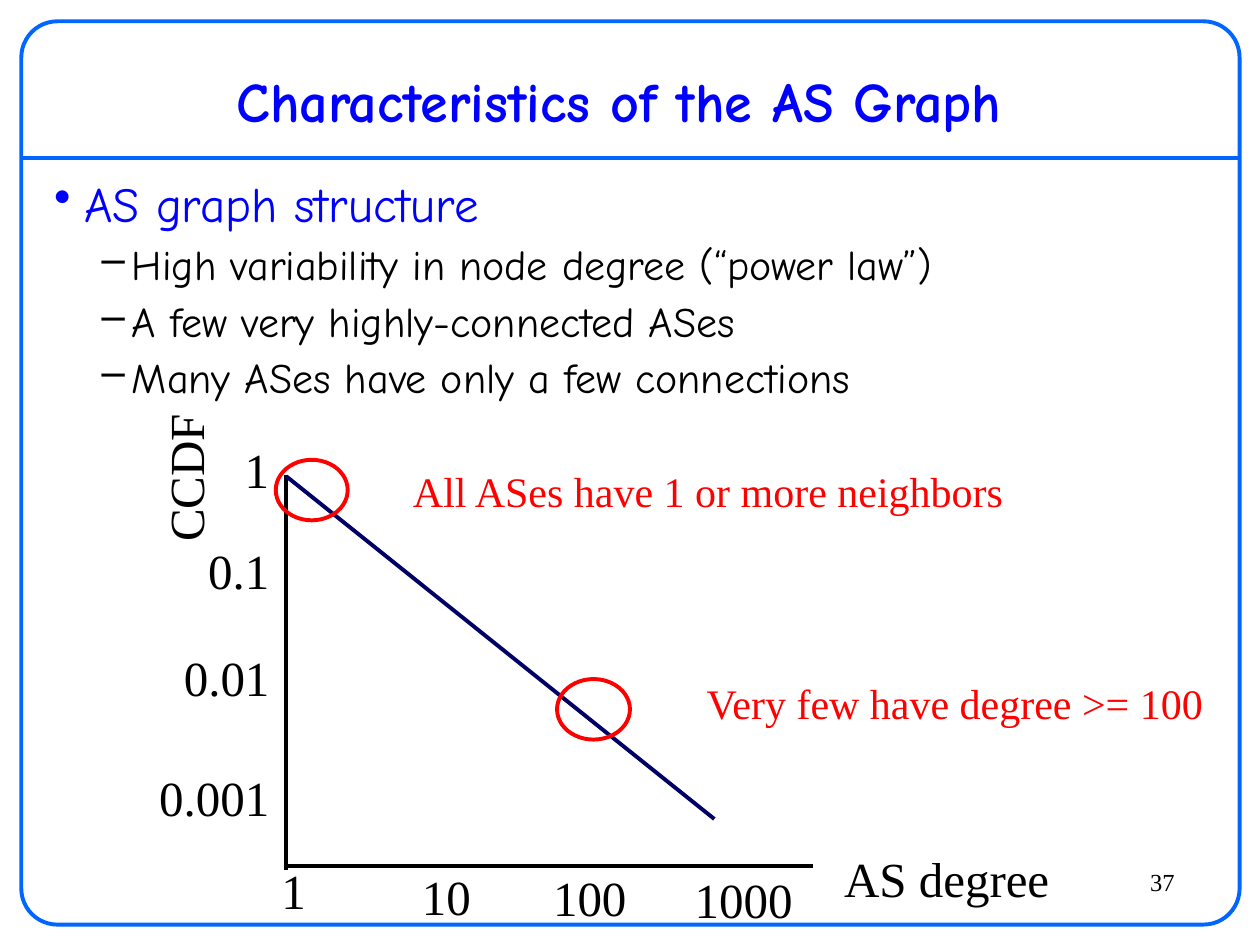
from dataclasses import dataclass

from lxml import etree
from pptx import Presentation
from pptx.dml.color import RGBColor
from pptx.enum.shapes import MSO_CONNECTOR, MSO_SHAPE
from pptx.enum.text import MSO_ANCHOR, PP_ALIGN
from pptx.oxml.ns import qn
from pptx.util import Cm, Pt

STRAIGHT = MSO_CONNECTOR.STRAIGHT
ROUNDED, OVAL = MSO_SHAPE.ROUNDED_RECTANGLE, MSO_SHAPE.OVAL
LEFT, CENTER, RIGHT = PP_ALIGN.LEFT, PP_ALIGN.CENTER, PP_ALIGN.RIGHT
TOP, MIDDLE = MSO_ANCHOR.TOP, MSO_ANCHOR.MIDDLE


@dataclass(frozen=True)
class Theme:
    heading_font: str = "Comic Neue"
    label_font: str = "Times New Roman"
    frame: str = "0066FF"
    heading: str = "0000FF"
    ink: str = "000000"
    trend: str = "000066"
    accent: str = "FF0000"
    title_size: int = 32
    large: int = 28
    medium: int = 24
    small: int = 14
    stroke: float = 2.25


class SlideBuilder:
    """Draws styled elements on one page; lengths are in centimetres."""

    def __init__(self, page, theme):
        self.page = page
        self.theme = theme

    def add_span(self, para, text, size, color, font, bold=False):
        span = para.add_run()
        span.text = text
        span.font.name = font
        span.font.size = Pt(size)
        span.font.bold = bold
        span.font.color.rgb = RGBColor.from_string(color)

    def title(self, text, left, top, width, height):
        box = self.page.shapes.title
        box.left, box.top, box.width, box.height = map(Cm, (left, top, width, height))
        box.text_frame.vertical_anchor = MIDDLE
        para = box.text_frame.paragraphs[0]
        para.alignment = CENTER
        self.add_span(para, text, self.theme.title_size, self.theme.heading,
                      self.theme.heading_font, bold=True)

    def label(self, text, left, top, width, height=1.45, size=None,
              color=None, align=CENTER, rotation=0):
        box = self.page.shapes.add_textbox(Cm(left), Cm(top), Cm(width), Cm(height))
        box.rotation = rotation
        box.text_frame.word_wrap = False
        para = box.text_frame.paragraphs[0]
        para.alignment = align
        self.add_span(para, text, size or self.theme.large,
                      color or self.theme.ink, self.theme.label_font)

    def bullets(self, items, left, top, width, height):
        """Items are (level, text) pairs."""
        theme = self.theme
        levels = (("•", 0.61, theme.large, theme.heading, 2),
                  ("–", 1.57, theme.medium, theme.ink, 3.5))
        box = self.page.shapes.add_textbox(Cm(left), Cm(top), Cm(width), Cm(height))
        frame = box.text_frame
        frame.word_wrap = True
        frame.vertical_anchor = TOP
        for index, (level, text) in enumerate(items):
            mark, margin, size, color, gap = levels[level]
            para = frame.add_paragraph() if index else frame.paragraphs[0]
            para.level = level
            para.alignment = LEFT
            para.space_before = Pt(gap)
            self.add_span(para, text, size, color, theme.heading_font)
            properties = para._p.get_or_add_pPr()
            properties.set("marL", str(Cm(margin)))
            properties.set("indent", str(Cm(-0.61)))
            etree.SubElement(properties, qn("a:buChar")).set("char", mark)

    def line(self, start, end, color):
        connector = self.page.shapes.add_connector(
            STRAIGHT, *map(Cm, (*start, *end)))
        connector.line.color.rgb = RGBColor.from_string(color)
        connector.line.width = Pt(self.theme.stroke)
        etree.SubElement(connector._element.spPr, qn("a:effectLst"))

    def outline(self, kind, left, top, width, height, color):
        shape = self.page.shapes.add_shape(
            kind, *map(Cm, (left, top, width, height)))
        shape.shadow.inherit = False
        shape.fill.background()
        shape.line.color.rgb = RGBColor.from_string(color)
        shape.line.width = Pt(self.theme.stroke)
        return shape


def main():
    deck = Presentation()
    deck.slide_width, deck.slide_height = Cm(25.4), Cm(19.05)
    theme = Theme()
    page = deck.slides.add_slide(deck.slide_layouts[5])
    draw = SlideBuilder(page, theme)

    # Page frame, divider and number
    draw.line((0.43, 3.18), (24.97, 3.18), theme.frame)
    frame = draw.outline(ROUNDED, 0.43, 0.43, 24.56, 18.21, theme.frame)
    frame.adjustments[0] = 0.04
    draw.label("37", 21.39, 17.35, 2.54, 1.07, size=theme.small, align=RIGHT)

    # Heading and bullets
    draw.title("Characteristics of the AS Graph", 0.84, 1.07, 23.29, 1.91)
    draw.bullets([
        (0, "AS graph structure"),
        (1, "High variability in node degree (“power law”)"),
        (1, "A few very highly-connected ASes"),
        (1, "Many ASes have only a few connections"),
    ], 0.84, 3.38, 23.93, 6.63)

    # Axes and their names
    draw.line((5.77, 9.58), (5.77, 17.53), theme.ink)
    draw.line((5.79, 17.45), (16.38, 17.45), theme.ink)
    draw.label("CCDF", 2.18, 8.91, 3.1, rotation=270)
    draw.label("AS degree", 16.76, 16.99, 4.65)

    # Degree ticks, centred on their positions
    for text, center, top, width in (("1", 5.92, 17.22, 1.02),
                                     ("10", 9.0, 17.35, 1.5),
                                     ("100", 11.89, 17.37, 1.98),
                                     ("1000", 14.99, 17.4, 2.49)):
        draw.label(text, center - width / 2, top, width)

    # Probability ticks, flush against the vertical axis
    tick_right = 5.69
    for text, top, width in (("1", 8.74, 1.02), ("0.1", 10.77, 1.75),
                             ("0.01", 12.93, 2.24), ("0.001", 15.34, 2.74)):
        draw.label(text, tick_right - width, top, width)

    # Power-law line
    draw.line((5.77, 9.6), (14.4, 16.51), theme.trend)

    # Circled points and their remarks
    for circle, text, left, top, width in (
            ((5.56, 9.27, 1.45, 1.22),
             "All ASes have 1 or more neighbors", 8.05, 9.25, 12.45),
            ((11.23, 13.69, 1.47, 1.22),
             "Very few have degree >= 100", 13.94, 13.54, 10.62)):
        draw.outline(OVAL, *circle, theme.accent)
        draw.label(text, left, top, width, 1.27, size=theme.medium,
                   color=theme.accent)

    deck.save("out.pptx")


if __name__ == "__main__":
    main()
